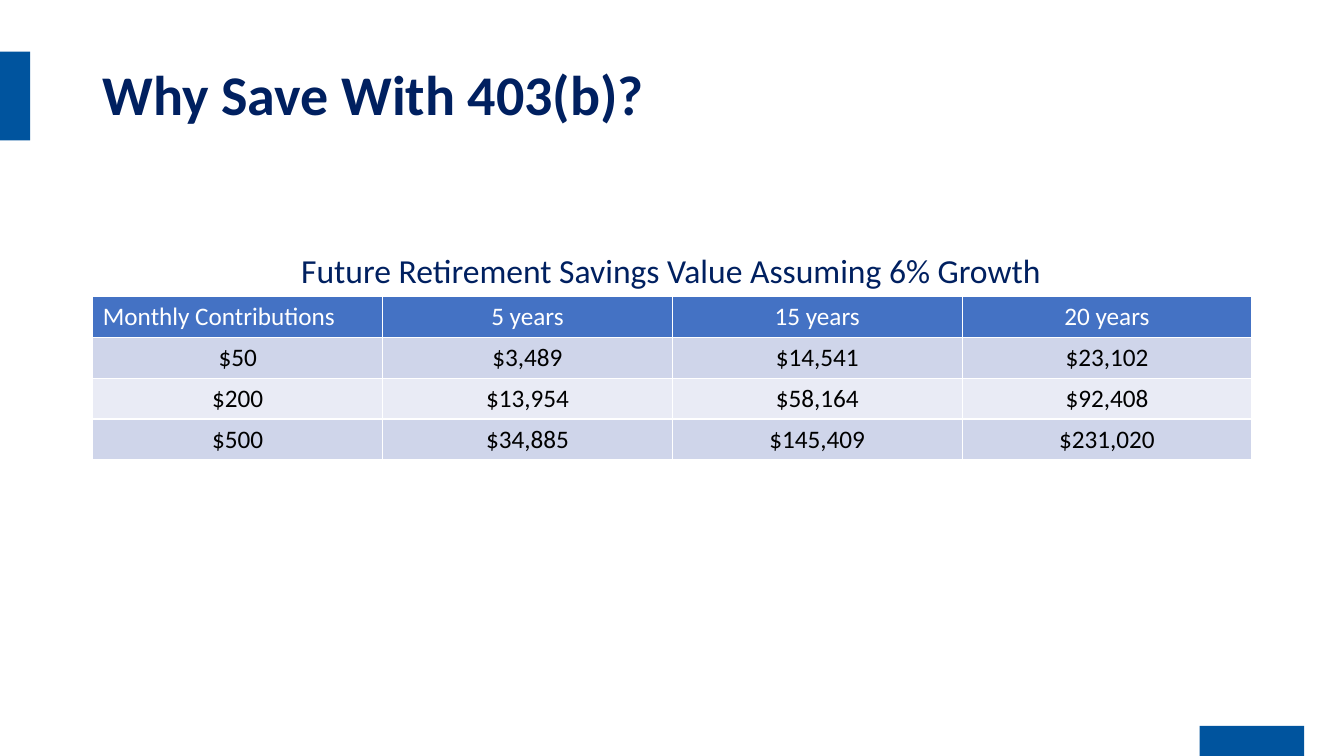
from dataclasses import dataclass

from pptx import Presentation
from pptx.dml.color import RGBColor
from pptx.enum.shapes import MSO_SHAPE
from pptx.enum.text import MSO_ANCHOR, PP_ALIGN
from pptx.util import Cm, Pt

RECTANGLE = MSO_SHAPE.RECTANGLE
TOP, MIDDLE = MSO_ANCHOR.TOP, MSO_ANCHOR.MIDDLE
LEFT, CENTER = PP_ALIGN.LEFT, PP_ALIGN.CENTER
BLANK_LAYOUT = 6


@dataclass(frozen=True)
class Theme:
    font: str = "Calibri"
    accent: RGBColor = RGBColor(0x00, 0x54, 0x9E)
    navy: RGBColor = RGBColor(0x00, 0x20, 0x60)
    white: RGBColor = RGBColor(0xFF, 0xFF, 0xFF)
    black: RGBColor = RGBColor(0x00, 0x00, 0x00)
    header: RGBColor = RGBColor(0x44, 0x72, 0xC4)
    dark_band: RGBColor = RGBColor(0xCF, 0xD5, 0xEA)
    light_band: RGBColor = RGBColor(0xE9, 0xEB, 0xF5)
    title_size: Pt = Pt(40)
    caption_size: Pt = Pt(24)
    table_size: Pt = Pt(18)


THEME = Theme()

SAVINGS = [
    ["Monthly Contributions", "5 years", "15 years", "20 years"],
    ["$50", "$3,489", "$14,541", "$23,102"],
    ["$200", "$13,954", "$58,164", "$92,408"],
    ["$500", "$34,885", "$145,409", "$231,020"],
]


def style_paragraph(paragraph, size, color, bold=False):
    font = paragraph.font
    font.name, font.size, font.bold = THEME.font, size, bold
    font.color.rgb = color


def add_accent_bar(slide, left, top, width, height):
    bar = slide.shapes.add_shape(RECTANGLE, left, top, width, height)
    bar.shadow.inherit = False
    bar.fill.solid()
    bar.fill.fore_color.rgb = THEME.accent
    bar.line.fill.background()


def add_text(slide, text, left, top, width, height, size, anchor=TOP, bold=False):
    frame = slide.shapes.add_textbox(left, top, width, height).text_frame
    frame.word_wrap = True
    frame.vertical_anchor = anchor
    paragraph = frame.paragraphs[0]
    paragraph.text = text
    style_paragraph(paragraph, size, THEME.navy, bold)
    return paragraph


def add_savings_table(slide, rows, left, top, width, row_height):
    # The default table style supplies the white cell borders
    table = slide.shapes.add_table(
        len(rows), len(rows[0]), left, top, width, row_height * len(rows)
    ).table
    for r, values in enumerate(rows):
        is_header = r == 0
        band = THEME.dark_band if r % 2 else THEME.light_band
        for c, value in enumerate(values):
            cell = table.cell(r, c)
            cell.fill.solid()
            cell.fill.fore_color.rgb = THEME.header if is_header else band
            cell.text = value
            paragraph = cell.text_frame.paragraphs[0]
            paragraph.alignment = LEFT if is_header and c == 0 else CENTER
            style_paragraph(
                paragraph, THEME.table_size, THEME.white if is_header else THEME.black
            )


def main():
    prs = Presentation()
    prs.slide_width, prs.slide_height = Cm(33.87), Cm(19.05)
    slide = prs.slides.add_slide(prs.slide_layouts[BLANK_LAYOUT])

    # Accent bars on the left and bottom edges
    add_accent_bar(slide, Cm(0), Cm(1.3), Cm(0.76), Cm(2.24))
    add_accent_bar(slide, Cm(30.23), Cm(18.29), Cm(2.64), Cm(0.76))

    # Title
    title = add_text(slide, "Why Save With 403(b)?", Cm(2.34), Cm(1.02),
                     Cm(29.21), Cm(2.87), THEME.title_size, MIDDLE, bold=True)
    title.line_spacing = 0.9

    # Savings table with its caption
    add_savings_table(slide, SAVINGS, Cm(2.34), Cm(7.47), Cm(29.21), Cm(1.03))
    add_text(slide, "Future Retirement Savings Value Assuming 6% Growth",
             Cm(7.34), Cm(6.17), Cm(19.15), Cm(1.28), THEME.caption_size)

    prs.save("out.pptx")


if __name__ == "__main__":
    main()
